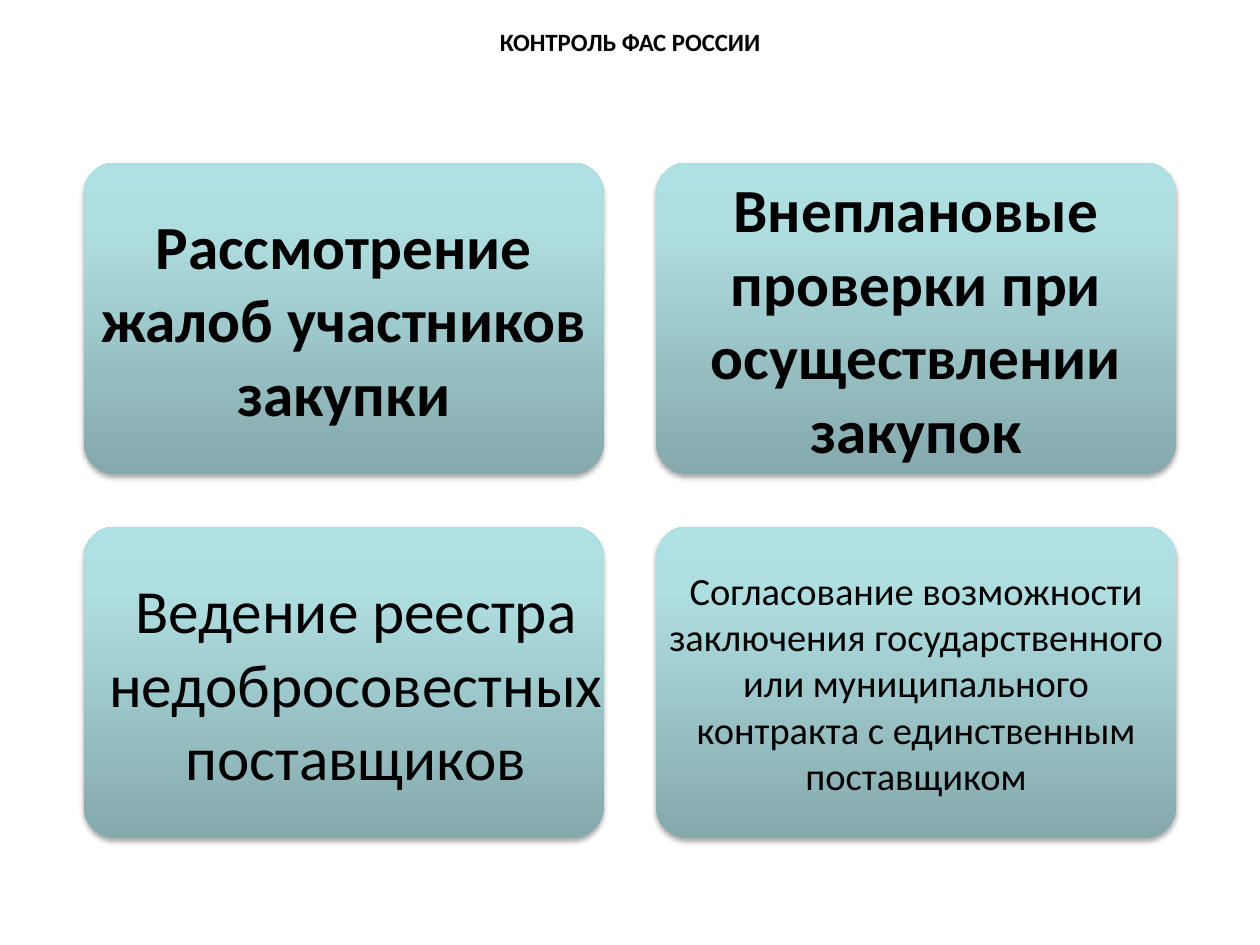
import pptx
import pptx.dml.color
import pptx.enum.shapes
import pptx.enum.text
import pptx.oxml
import pptx.oxml.ns
import pptx.util

Pt = pptx.util.Pt
RGB = pptx.dml.color.RGBColor.from_string
COLORS = {"text": "000000", "low": "85A9AC", "mid": "AFDEE1", "top": "AFE0E4"}
STOPS = [(0, "low"), (80, "mid"), (100, "top")]
CARD = (297, 178)
GAP = 30
INSET = 5.5
# wording, text box size, font format; row by row
CARDS = [
    ("Рассмотрение жалоб участников закупки", (286, 164), {"size": Pt(35), "bold": True}),
    ("Внеплановые проверки при осуществлении закупок", (286, 164), {"size": Pt(35), "bold": True}),
    ("Ведение реестра недобросовестных поставщиков", (300, 123), {"size": Pt(35), "bold": False}),
    ("Согласование возможности заключения государственного или муниципального "
     "контракта с единственным поставщиком", (286, 156), {"size": Pt(22), "bold": False}),
]


def parse(xml):
    return pptx.oxml.parse_xml(xml.replace(">", " " + pptx.oxml.ns.nsdecls("a") + ">", 1))


def write(frame, text, style):
    """Fill a text frame with one centred paragraph."""
    form = {
        "word_wrap": True,
        "auto_size": pptx.enum.text.MSO_AUTO_SIZE.NONE,
        "vertical_anchor": pptx.enum.text.MSO_ANCHOR.MIDDLE,
        "margin_left": 0, "margin_right": 0, "margin_top": 0, "margin_bottom": 0,
    }
    for name, value in form.items():
        setattr(frame, name, value)
    para = frame.paragraphs[0]
    para.alignment = pptx.enum.text.PP_ALIGN.CENTER
    run = para.add_run()
    run.text = text
    for name, value in {"name": "Calibri", **style}.items():
        setattr(run.font, name, value)
    run.font.color.rgb = RGB(COLORS["text"])


def paint(shape):
    """Give a card its rising gradient and soft shadow."""
    shape.line.fill.background()
    shape.shadow.inherit = False
    props = shape.fill._xPr
    stops = "".join(
        f'<a:gs pos="{pos * 1000}"><a:srgbClr val="{COLORS[key]}"/></a:gs>'
        for pos, key in STOPS)
    fill = parse(f'<a:gradFill rotWithShape="1"><a:gsLst>{stops}</a:gsLst>'
                 '<a:lin ang="16200000" scaled="0"/></a:gradFill>')
    props.find(pptx.oxml.ns.qn("a:prstGeom")).addnext(fill)
    shade = parse(f'<a:outerShdw blurRad="{Pt(3)}" dist="{Pt(1.8)}" dir="5400000" '
                  f'rotWithShape="0"><a:srgbClr val="{COLORS["text"]}">'
                  '<a:alpha val="35000"/></a:srgbClr></a:outerShdw>')
    props.find(pptx.oxml.ns.qn("a:effectLst")).append(shade)


def head(slide, box):
    title = slide.shapes.title
    for name, value in zip(("left", "top", "width", "height"), box):
        setattr(title, name, Pt(value))
    write(title.text_frame, "КОНТРОЛЬ ФАС РОССИИ", {"size": Pt(14.2), "bold": True})


def card(slide, box, text, size, style):
    left, top, width, height = box
    shape = slide.shapes.add_shape(
        pptx.enum.shapes.MSO_SHAPE.ROUNDED_RECTANGLE, *map(Pt, box))
    shape.adjustments[0] = 0.1
    paint(shape)
    label = slide.shapes.add_textbox(
        Pt(left + INSET), Pt(top + (height - size[1]) / 2), *map(Pt, size))
    write(label.text_frame, text, style)


def grid(slide, left, top):
    """Lay the cards out in two columns."""
    for i, (text, size, style) in enumerate(CARDS):
        row, col = divmod(i, 2)
        box = (left + col * (CARD[0] + GAP), top + row * (CARD[1] + GAP), *CARD)
        card(slide, box, text, size, style)


def main():
    deck = pptx.Presentation()
    deck.slide_width, deck.slide_height = Pt(720), Pt(540)
    slide = deck.slides.add_slide(deck.slide_layouts.get_by_name("Title Only"))
    head(slide, (48, 0, 624, 48))
    grid(slide, 48, 93)
    deck.save("out.pptx")


if __name__ == "__main__":
    main()
